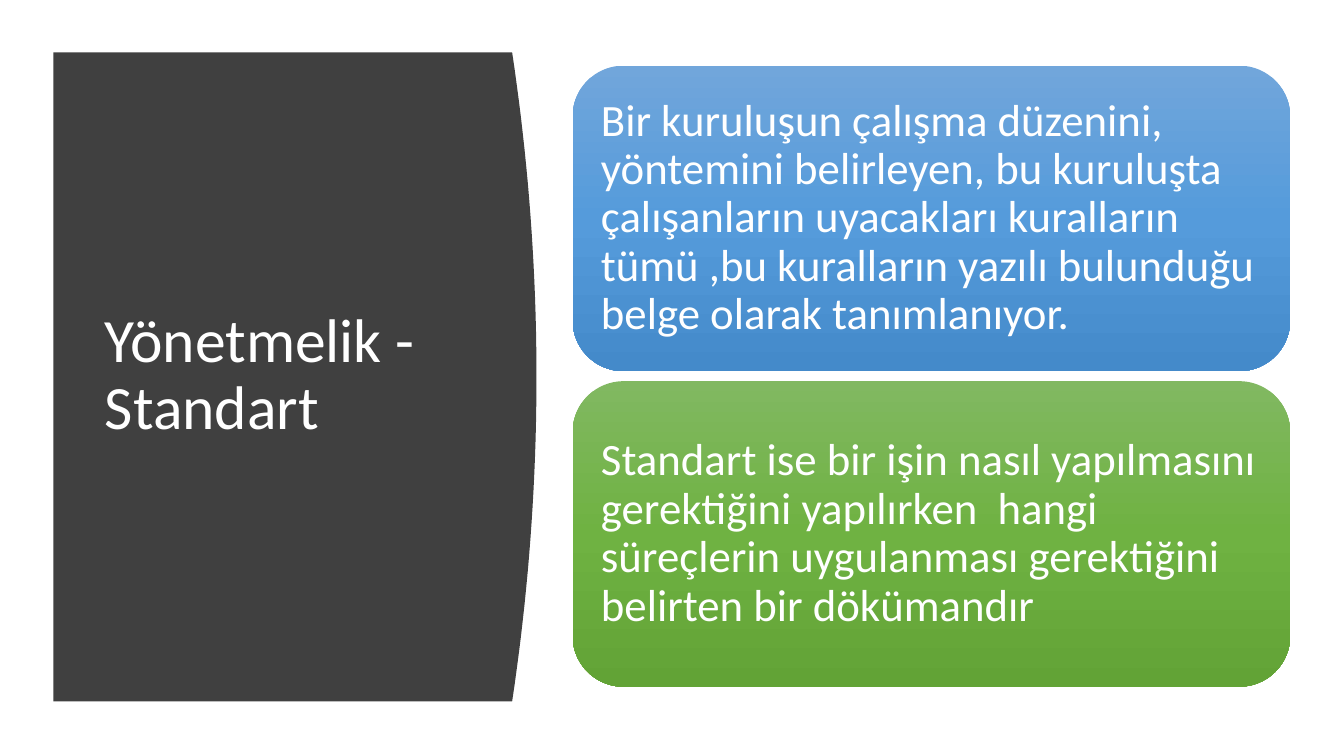
from copy import deepcopy
from dataclasses import dataclass

from pptx import Presentation
from pptx.dml.color import RGBColor
from pptx.enum.shapes import MSO_SHAPE
from pptx.enum.text import MSO_ANCHOR, MSO_AUTO_SIZE, PP_ALIGN
from pptx.oxml.ns import qn
from pptx.util import Pt

ROUND_RECT = MSO_SHAPE.ROUNDED_RECTANGLE
MIDDLE = MSO_ANCHOR.MIDDLE
LEFT = PP_ALIGN.LEFT
NO_FIT = MSO_AUTO_SIZE.NONE

FONT = "Calibri"
COLOURS = {
    "panel": "404040",
    "text": "FFFFFF",
    "blue_top": "71A6DB", "blue_mid": "559BDB", "blue_end": "448ACA",
    "green_top": "81B861", "green_mid": "6FB242", "green_end": "62A336",
}

# Panel: straight sides and a bulging right edge
PANEL_LEFT, PANEL_TOP, PANEL_HEIGHT = 38.2, 37.4, 463.7
PANEL_EDGE, PANEL_BULGE, CURVE_STEPS = 365.8, 17.4, 40

# Definition cards: one column, equal steps
CARD_LEFT, CARD_TOP, CARD_WIDTH, CARD_HEIGHT = 409, 46.9, 512.6, 218.2
CARD_GAP = 7.2


@dataclass
class Card:
    text: str
    hue: str


CARDS = [
    Card("Bir kuruluşun çalışma düzenini, yöntemini belirleyen, bu kuruluşta "
         "çalışanların uyacakları kuralların tümü ,bu kuralların yazılı "
         "bulunduğu belge olarak tanımlanıyor.", "blue"),
    Card("Standart ise bir işin nasıl yapılmasını gerektiğini yapılırken  hangi "
         "süreçlerin uygulanması gerektiğini belirten bir dökümandır", "green"),
]


def rgb(name: str) -> RGBColor:
    return RGBColor.from_string(COLOURS[name])


def write(shape, text: str, *, size: float, inset: float, inset_y: float) -> None:
    tf = shape.text_frame
    tf.word_wrap = True
    tf.auto_size = NO_FIT
    tf.vertical_anchor = MIDDLE
    tf.margin_left = tf.margin_right = Pt(inset)
    tf.margin_top = tf.margin_bottom = Pt(inset_y)
    p = tf.paragraphs[0]
    p.alignment = LEFT
    p.line_spacing = 0.9
    p.space_before = Pt(0)
    r = p.add_run()
    r.text = text
    r.font.name = FONT
    r.font.size = Pt(size)
    r.font.color.rgb = rgb("text")


def fill_gradient(shape, hue: str) -> None:
    fill = shape.fill
    fill.gradient()
    fill.gradient_angle = 270
    # Add a third stop to the default pair
    stops = shape.element.spPr.find(".//" + qn("a:gsLst"))
    stops.append(deepcopy(stops[-1]))
    for i, part in enumerate(("top", "mid", "end")):
        stop = fill.gradient_stops[i]
        stop.position = i / 2
        stop.color.rgb = rgb(f"{hue}_{part}")


def add_panel(s):
    curve = []
    for i in range(CURVE_STEPS + 1):
        t = i / CURVE_STEPS
        x = PANEL_EDGE + PANEL_BULGE * (1 - (2 * t - 1) ** 2)
        curve.append((Pt(x), Pt(PANEL_TOP + PANEL_HEIGHT * t)))
    builder = s.shapes.build_freeform(Pt(PANEL_LEFT), Pt(PANEL_TOP))
    builder.add_line_segments(curve + [(Pt(PANEL_LEFT), Pt(PANEL_TOP + PANEL_HEIGHT))])
    panel = builder.convert_to_shape()
    panel.shadow.inherit = False
    panel.fill.solid()
    panel.fill.fore_color.rgb = rgb("panel")
    panel.line.fill.background()
    return panel


def add_card(s, card: Card, row: int) -> None:
    top = CARD_TOP + row * (CARD_HEIGHT + CARD_GAP)
    sp = s.shapes.add_shape(ROUND_RECT, Pt(CARD_LEFT), Pt(top),
                            Pt(CARD_WIDTH), Pt(CARD_HEIGHT))
    sp.shadow.inherit = False
    sp.line.fill.background()
    fill_gradient(sp, card.hue)
    write(sp, card.text, size=32, inset=9.6, inset_y=9.6)


def main() -> None:
    prs = Presentation()
    prs.slide_width, prs.slide_height = Pt(960), Pt(540)
    s = prs.slides.add_slide(prs.slide_layouts.get_by_name("Title Only"))

    # Title on the dark panel
    title = s.shapes.title
    title.left, title.top = Pt(67.7), Pt(79.9)
    title.width, title.height = Pt(269.3), Pt(377.3)
    write(title, "Yönetmelik - Standart", size=44, inset=7.2, inset_y=3.6)
    title.element.addprevious(add_panel(s).element)

    # Definition cards
    for row, card in enumerate(CARDS):
        add_card(s, card, row)

    prs.save("out.pptx")


if __name__ == "__main__":
    main()
